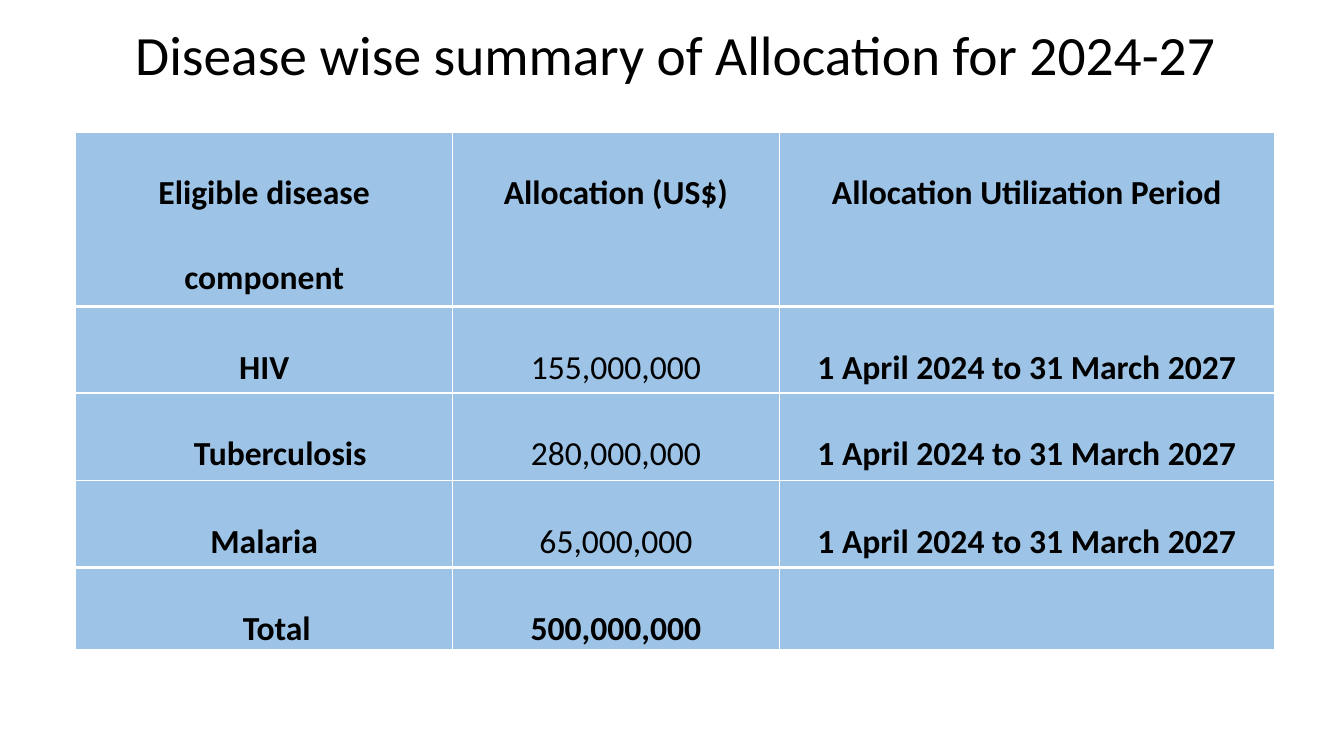
"""Build the slide summarising the 2024-27 allocation by disease."""
from lxml import etree
from pptx import Presentation
from pptx.dml.color import RGBColor
from pptx.enum import text
from pptx.oxml import ns
from pptx.util import Inches, Pt


def paint(target, color):
    target.rgb = RGBColor.from_string(color)


def add_border(cell, side, width, position):
    line = etree.Element(ns.qn(f"a:ln{side}"), w=str(Pt(width)))
    fill = etree.SubElement(line, ns.qn("a:solidFill"))
    etree.SubElement(fill, ns.qn("a:srgbClr"), val="FFFFFF")
    cell._tc.get_or_add_tcPr().insert(position, line)


deck = Presentation()
deck.slide_width, deck.slide_height = Inches(13.33), Inches(7.5)
slide = deck.slides.add_slide(deck.slide_layouts[5])

heading = slide.shapes.title
heading_box = {"left": 1.2, "top": 0.14, "width": 11, "height": 0.86}
for side, length in heading_box.items():
    setattr(heading, side, Inches(length))
heading.text_frame.text = "Disease wise summary of Allocation for 2024-27"
heading.text_frame.auto_size = text.MSO_AUTO_SIZE.NONE
heading.text_frame.vertical_anchor = text.MSO_ANCHOR.MIDDLE
heading_line = heading.text_frame.paragraphs[0]
heading_line.alignment = text.PP_ALIGN.CENTER
heading_line.line_spacing = 0.9
heading_font = {"name": "Calibri", "size": Pt(39.6), "bold": False}
for key, value in heading_font.items():
    setattr(heading_line.font, key, value)
paint(heading_line.font.color, "000000")

period = "1 April 2024 to 31 March 2027"
allocations = [
    ["Eligible disease\ncomponent", "Allocation (US$)", "Allocation Utilization Period"],
    ["HIV", "155,000,000", period],
    ["Tuberculosis", "280,000,000", period],
    ["Malaria", "65,000,000", period],
    ["Total", "500,000,000", ""],
]
column_widths = [3.74, 3.24, 4.91]
row_heights = [1.73, 0.86, 0.87, 0.86, 0.78]
column_margins = [(0.48, 0.48), (0.32, 0.32), (0.36, 0.36)]
special_margins = {"Tuberculosis": (0.63, 0.31), "Total": (0.32, 0.07)}
no_insets = dict.fromkeys(["margin_left", "margin_top", "margin_right", "margin_bottom"], 0)
last = len(allocations) - 1

summary = slide.shapes.add_table(
    len(allocations), len(column_widths),
    Inches(0.75), Inches(1.31), Inches(sum(column_widths)), Inches(sum(row_heights)),
).table
for column, width in zip(summary.columns, column_widths):
    column.width = Inches(width)
for row, height in zip(summary.rows, row_heights):
    row.height = Inches(height)

for r, entries in enumerate(allocations):
    for c, entry in enumerate(entries):
        cell = summary.cell(r, c)
        cell.text = entry
        for key, value in no_insets.items():
            setattr(cell, key, value)
        cell.fill.solid()
        paint(cell.fill.fore_color, "9DC3E6")
        borders = {"L": 1, "R": 1, "T": 3 if r in (1, last) else 1,
                   "B": 3 if r in (0, last - 1) else 1}
        for position, (side, width) in enumerate(borders.items()):
            add_border(cell, side, width, position)
        if not entry:
            continue

        left, right = special_margins.get(entry, column_margins[c])
        entry_font = {"name": "Calibri", "size": Pt(24), "bold": c != 1 or r in (0, last)}
        for n, line in enumerate(cell.text_frame.paragraphs):
            line.alignment = text.PP_ALIGN.CENTER
            line.line_spacing = 2.0
            if r == 0:
                line.space_before = Pt(7 if c else 2 * n)
            margins = line._p.get_or_add_pPr()
            margins.set("marL", str(Inches(left)))
            margins.set("marR", str(Inches(right)))
            for key, value in entry_font.items():
                setattr(line.runs[0].font, key, value)
            paint(line.runs[0].font.color, "000000")

deck.save("out.pptx")
